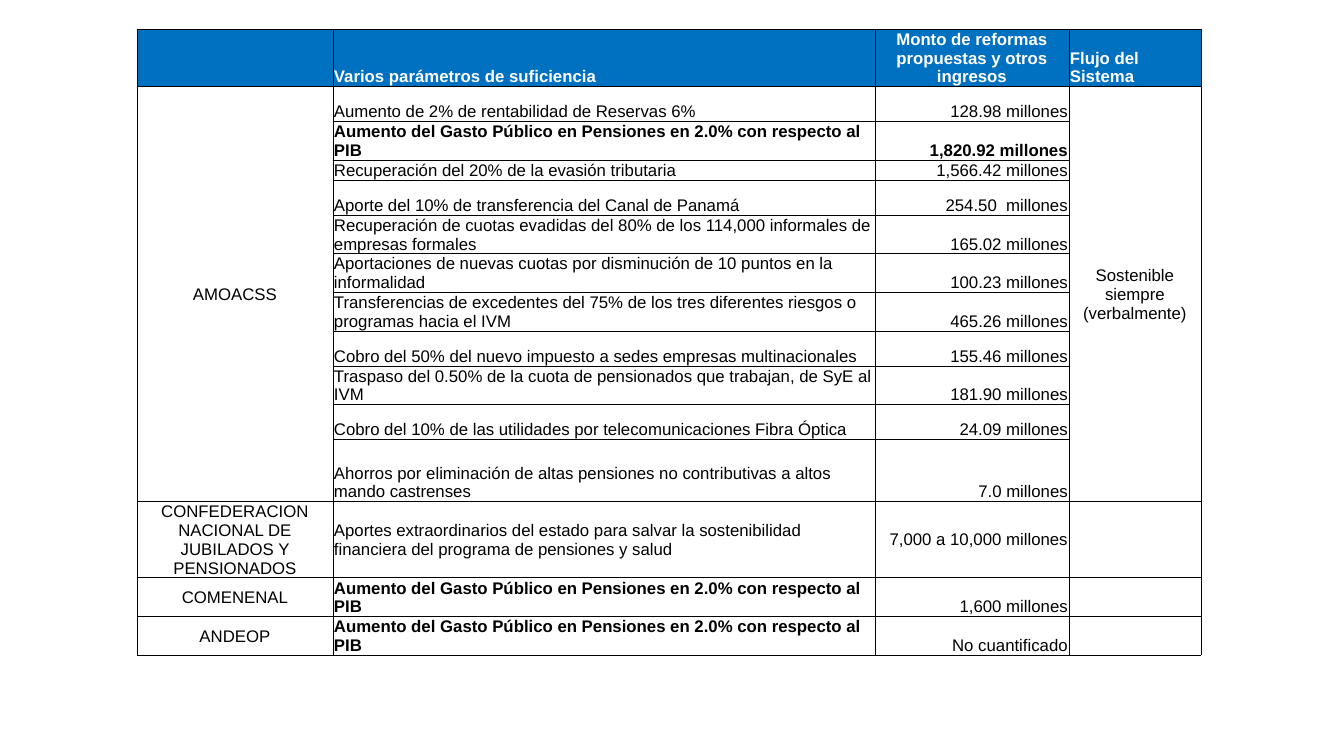
from lxml.etree import SubElement
from pptx import Presentation
from pptx.dml.color import RGBColor
from pptx.enum.text import MSO_ANCHOR, PP_ALIGN
from pptx.oxml.ns import qn
from pptx.util import Emu, Pt

BLUE, WHITE, BLACK = "0070C0", "FFFFFF", "000000"
COLUMNS = [196, 542, 194, 132]
ALIGNS = [PP_ALIGN.CENTER, PP_ALIGN.LEFT, PP_ALIGN.RIGHT, PP_ALIGN.CENTER]
HEADER_ALIGNS = [PP_ALIGN.LEFT, PP_ALIGN.LEFT, PP_ALIGN.CENTER, PP_ALIGN.LEFT]
HEIGHTS = [36, 35, 36, 18] + [35] * 7 + [62, 62, 36, 36]
GASTO = "Aumento del Gasto Público en Pensiones en 2.0% con respecto al PIB"
ROWS = [
    ["", "Varios parámetros de suficiencia",
     "Monto de reformas propuestas y otros ingresos", "Flujo del Sistema"],
    ["AMOACSS", "Aumento de 2% de rentabilidad de Reservas 6%",
     "128.98 millones", "Sostenible siempre (verbalmente)"],
    ["", GASTO, "1,820.92 millones", ""],
    ["", "Recuperación del 20% de la evasión tributaria", "1,566.42 millones", ""],
    ["", "Aporte del 10% de transferencia del Canal de Panamá", "254.50  millones", ""],
    ["", "Recuperación de cuotas evadidas del 80% de los 114,000 informales de empresas formales",
     "165.02 millones", ""],
    ["", "Aportaciones de nuevas cuotas por disminución de 10 puntos en la informalidad",
     "100.23 millones", ""],
    ["", "Transferencias de excedentes del 75% de los tres diferentes riesgos o programas hacia el IVM",
     "465.26 millones", ""],
    ["", "Cobro del 50% del nuevo impuesto a sedes empresas multinacionales",
     "155.46 millones", ""],
    ["", "Traspaso del 0.50% de la cuota de pensionados que trabajan, de SyE al IVM",
     "181.90 millones", ""],
    ["", "Cobro del 10% de las utilidades por telecomunicaciones Fibra Óptica",
     "24.09 millones", ""],
    ["", "Ahorros por eliminación de altas pensiones no contributivas a altos mando castrenses",
     "7.0 millones", ""],
    ["CONFEDERACION NACIONAL DE JUBILADOS Y PENSIONADOS",
     "Aportes extraordinarios del estado para salvar la sostenibilidad financiera del programa de pensiones y salud",
     "7,000 a 10,000 millones", ""],
    ["COMENENAL", GASTO, "1,600 millones", ""],
    ["ANDEOP", GASTO, "No cuantificado", ""],
]
AMOACSS_FIRST, AMOACSS_LAST, CONFEDERACION = 1, 11, 12
BOLD_AMOUNT = "1,820.92 millones"


def px(n):
    return Emu(round(n * 914400 / 100.8))


def rgb(color):
    return RGBColor.from_string(color)


def add_borders(cell):
    tcPr = cell._tc.get_or_add_tcPr()
    for side in ("a:lnL", "a:lnR", "a:lnT", "a:lnB"):
        ln = SubElement(tcPr, qn(side), w=str(Pt(0.5)))
        fill = SubElement(ln, qn("a:solidFill"))
        SubElement(fill, qn("a:srgbClr"), val=BLACK)


def format_cell(cell, text, align, anchor, bold, header):
    cell.margin_left = cell.margin_right = cell.margin_top = px(1)
    cell.margin_bottom = 0
    cell.vertical_anchor = anchor
    add_borders(cell)
    if header:
        cell.fill.solid()
        cell.fill.fore_color.rgb = rgb(BLUE)
    else:
        cell.fill.background()
    if not text:
        return
    cell.text_frame.text = text
    p = cell.text_frame.paragraphs[0]
    p.alignment = align
    font = p.runs[0].font
    font.name, font.size, font.bold = "Arial", Pt(12), bold
    font.color.rgb = rgb(WHITE if header else BLACK)


def add_proposals(s, left, top):
    table = s.shapes.add_table(len(ROWS), len(COLUMNS), px(left), px(top),
                               px(sum(COLUMNS)), px(sum(HEIGHTS))).table
    table.first_row = table.horz_banding = False
    for column, width in zip(table.columns, COLUMNS):
        column.width = px(width)
    for i, (values, height) in enumerate(zip(ROWS, HEIGHTS)):
        table.rows[i].height = px(height)
        header = i == 0
        for j, text in enumerate(values):
            middle = not header and (j in (0, 3) or i == CONFEDERACION)
            format_cell(table.cell(i, j), text,
                        (HEADER_ALIGNS if header else ALIGNS)[j],
                        MSO_ANCHOR.MIDDLE if middle else MSO_ANCHOR.BOTTOM,
                        header or text in (GASTO, BOLD_AMOUNT), header)
    for j in (0, 3):
        table.cell(AMOACSS_FIRST, j).merge(table.cell(AMOACSS_LAST, j))


def main():
    prs = Presentation()
    prs.slide_width, prs.slide_height = px(1344), px(756)
    s = prs.slides.add_slide(prs.slide_layouts[6])
    add_proposals(s, 137, 29)
    prs.save("out.pptx")


if __name__ == "__main__":
    main()
